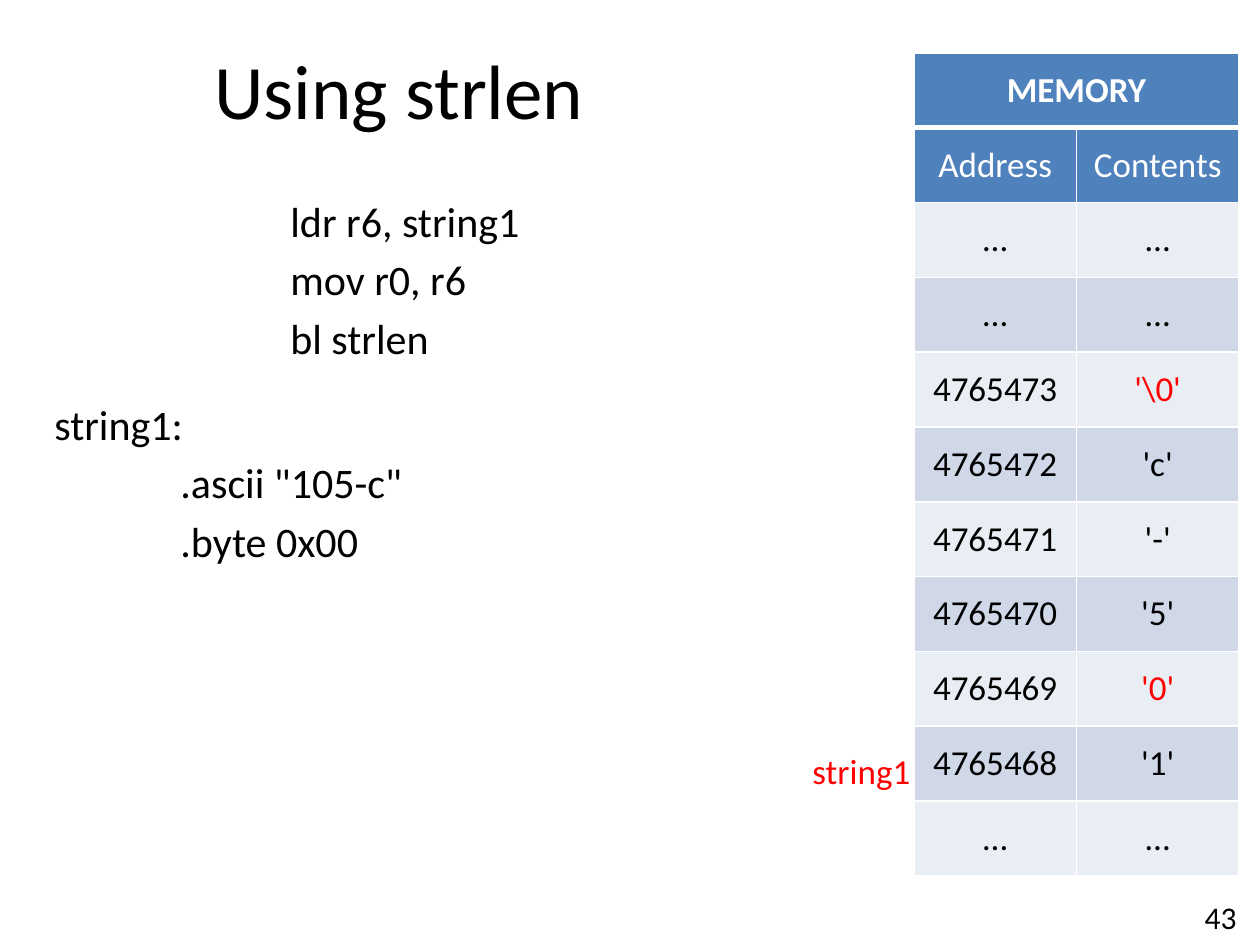
from lxml import etree
from pptx import Presentation, util as u
from pptx.dml.color import RGBColor
from pptx.enum import text
from pptx.oxml import ns

PX = 914400 / 126
FONT = "Calibri"
BLACK, WHITE, RED = "000000", "FFFFFF", "FF0000"
HEADER, BANDS = "4F81BD", ("E9EDF4", "D0D8E8")
LEFT, CENTER, RIGHT = text.PP_ALIGN.LEFT, text.PP_ALIGN.CENTER, text.PP_ALIGN.RIGHT
MIDDLE = text.MSO_ANCHOR.MIDDLE

# (text, indent in px, space before in pt)
CODE = [
    ("ldr r6, string1", 236, 4.8),
    ("mov r0, r6", 236, 4.8),
    ("bl strlen", 236, 4.8),
    ("string1:", 0, 20),
    (".ascii \"105-c\"", 126, 4.8),
    (".byte 0x00", 126, 4.8),
]
MEMORY = [
    ("MEMORY", ""),
    ("Address", "Contents"),
    ("…", "…"),
    ("…", "…"),
    ("4765473", "'\\0'"),
    ("4765472", "'c'"),
    ("4765471", "'-'"),
    ("4765470", "'5'"),
    ("4765469", "'0'"),
    ("4765468", "'1'"),
    ("…", "…"),
]
MARKED = ("'\\0'", "'0'")


def px(n):
    return u.Emu(round(n * PX))


def color(value):
    return RGBColor.from_string(value)


def write(paragraph, words, size, ink=BLACK, align=LEFT, bold=False):
    paragraph.alignment = align
    run = paragraph.add_run()
    run.text = words
    run.font.name, run.font.size, run.font.bold = FONT, u.Pt(size), bold
    run.font.color.rgb = color(ink)


def add_box(slide, left, top, width, height, wrap=True):
    frame = slide.shapes.add_textbox(px(left), px(top), px(width), px(height)).text_frame
    frame.word_wrap = wrap
    return frame


def add_borders(cell, widths):
    properties = cell._tc.get_or_add_tcPr()
    for side, width in widths.items():
        line = etree.SubElement(properties, ns.qn("a:ln" + side), w=str(u.Pt(width)))
        fill = etree.SubElement(line, ns.qn("a:solidFill"))
        etree.SubElement(fill, ns.qn("a:srgbClr"), val=WHITE)


def add_memory(slide, left, top, width, height):
    rows, columns = len(MEMORY), len(MEMORY[0])
    table = slide.shapes.add_table(rows, columns, px(left), px(top), px(width), px(height)).table
    for column in table.columns:
        column.width = px(width / columns)
    for row in table.rows:
        row.height = px(height / rows)
    table.cell(0, 0).merge(table.cell(0, columns - 1))
    for r, values in enumerate(MEMORY):
        for c, value in enumerate(values):
            cell = table.cell(r, c)
            add_borders(cell, {"L": 1, "R": 1, "T": 3 if r == 1 else 1, "B": 3 if r == 0 else 1})
            cell.fill.solid()
            cell.fill.fore_color.rgb = color(HEADER if r < 2 else BANDS[r % 2])
            cell.vertical_anchor = MIDDLE
            if value:
                ink = WHITE if r < 2 else RED if value in MARKED else BLACK
                write(cell.text_frame.paragraphs[0], value, 20, ink, CENTER, r == 0)


def main():
    deck = Presentation()
    deck.slide_width, deck.slide_height = px(1260), px(945)
    slide = deck.slides.add_slide(deck.slide_layouts[6])

    title = add_box(slide, 63, 10, 672, 158)
    title.vertical_anchor = MIDDLE
    write(title.paragraphs[0], "Using strlen", 44, align=CENTER)

    code = add_box(slide, 42, 189, 757, 693)
    for i, (words, indent, before) in enumerate(CODE):
        paragraph = code.add_paragraph() if i else code.paragraphs[0]
        paragraph.space_before = u.Pt(before)
        paragraph._p.get_or_add_pPr().set("marL", str(px(indent)))
        write(paragraph, words, 24)

    number = add_box(slide, 955, 892, 294, 50)
    write(number.paragraphs[0], "43", 18, align=RIGHT)

    add_memory(slide, 914, 53, 325, 823)

    label = add_box(slide, 800, 743, 125, 55, wrap=False)
    write(label.paragraphs[0], "string1", 20, RED)

    deck.save("out.pptx")


if __name__ == "__main__":
    main()
